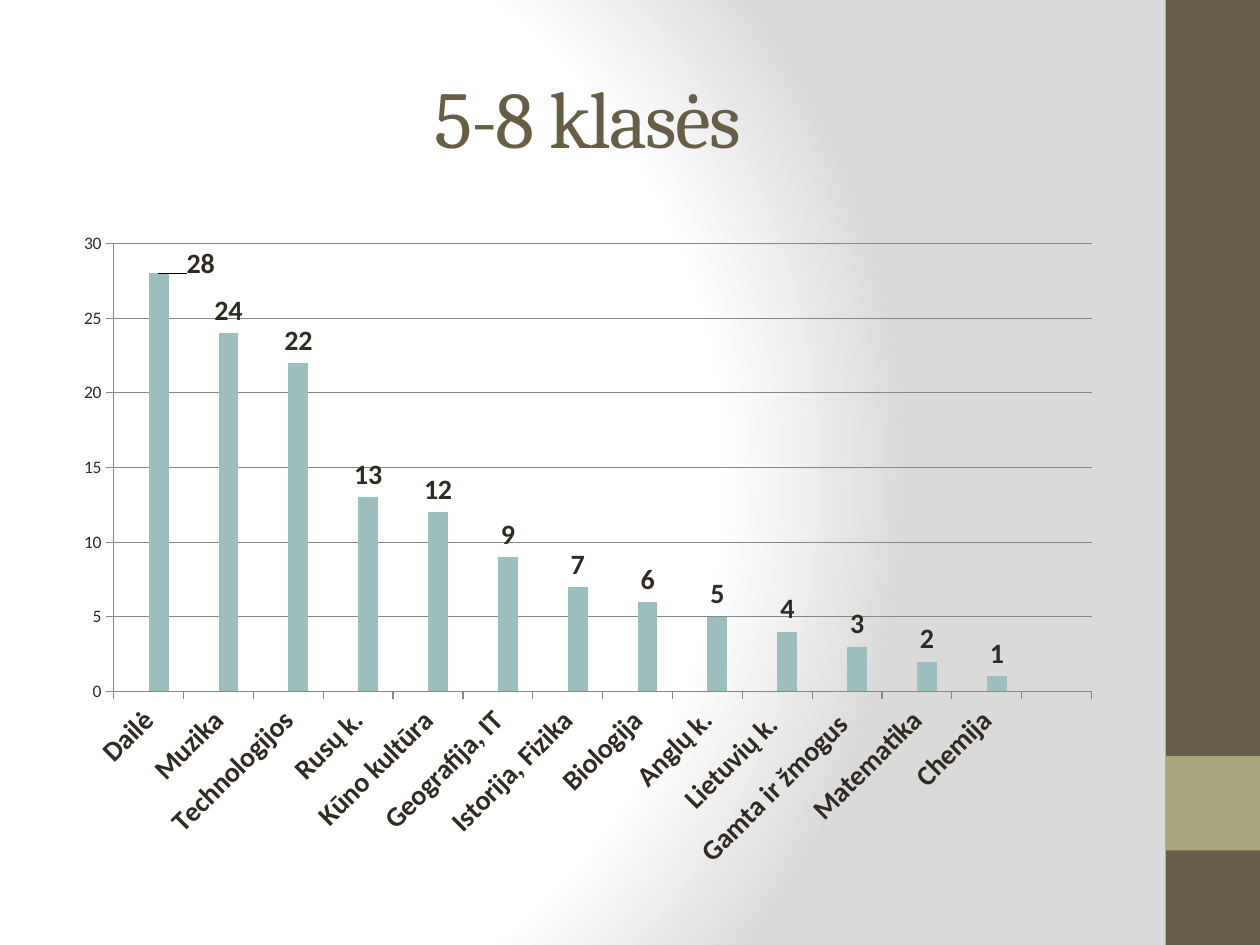
"""Build the slide with the column chart of subjects in grades 5-8."""
from pptx import Presentation
from pptx.chart.data import CategoryChartData
from pptx.dml.color import RGBColor
from pptx.enum.chart import XL_CHART_TYPE, XL_LABEL_POSITION, XL_TICK_MARK
from pptx.enum.shapes import MSO_SHAPE
from pptx.enum.text import MSO_ANCHOR, PP_ALIGN
from pptx.oxml import parse_xml
from pptx.oxml.ns import nsdecls
from pptx.util import Inches, Pt

HUE = {"bark": "675E47", "moss": "A9A57C", "teal": "9CBEBD",
       "ink": "2F2B20", "grid": "868686", "white": "FFFFFF", "mist": "DADADA"}
RANKS = {"Dailė": 28, "Muzika": 24, "Technologijos": 22, "Rusų k.": 13,
         "Kūno kultūra": 12, "Geografija, IT": 9, "Istorija, Fizika": 7,
         "Biologija": 6, "Anglų k.": 5, "Lietuvių k. ": 4,
         "Gamta ir žmogus ": 3, "Matematika": 2, "Chemija": 1, "": None}


def tint(name):
    return RGBColor.from_string(HUE[name])


def style(item, **form):
    for key, val in form.items():
        if key == "color":
            item.color.rgb = tint(val)
        else:
            setattr(item, key, val)


deck = Presentation()
deck.slide_width, deck.slide_height = Inches(10), Inches(7.5)
wide, high = deck.slide_width, deck.slide_height
slide = deck.slides.add_slide(deck.slide_layouts[5])

stops = "".join(f'<a:gs pos="{pos * 1000}"><a:srgbClr val="{HUE[name]}"/></a:gs>'
                for pos, name in ((0, "white"), (75, "white"), (100, "mist")))
slide.element.cSld.insert(0, parse_xml(
    f'<p:bg {nsdecls("p", "a")}><p:bgPr><a:gradFill rotWithShape="1">'
    f'<a:gsLst>{stops}</a:gsLst><a:path path="circle">'
    '<a:fillToRect l="20000" t="50000" r="100000" b="50000"/></a:path>'
    '</a:gradFill><a:effectLst/></p:bgPr></p:bg>'))

band = wide * 3 // 40
for top, tall, name in ((0, high, "bark"), (high * 4 // 5, band, "moss")):
    box = slide.shapes.add_shape(MSO_SHAPE.RECTANGLE, wide - band, top, band, tall)
    box.shadow.inherit = False
    box.fill.solid()
    box.fill.fore_color.rgb = tint(name)
    box.line.fill.background()

left, span = wide // 20, int(wide * 0.833)
title = slide.shapes.title
style(title, left=left, top=high // 25, width=span, height=high // 6)
style(title.text_frame, text="5-8 klasės", vertical_anchor=MSO_ANCHOR.MIDDLE)
line = title.text_frame.paragraphs[0]
line.alignment = PP_ALIGN.CENTER
run = line.runs[0]
style(run.font, name="Cambria", size=Pt(46), color="bark")
run.font._element.set("spc", "-100")

data = CategoryChartData()
data.categories = list(RANKS)
data.add_series("Series 1", [None] * len(RANKS))
data.add_series("Series 2", list(RANKS.values()))
chart = slide.shapes.add_chart(XL_CHART_TYPE.COLUMN_CLUSTERED, left, high * 7 // 30,
                               span, high * 7 // 10, data).chart
style(chart, has_legend=False, has_title=False)
style(chart.font, name="Calibri", size=Pt(10), color="ink")

plot = chart.plots[0]
style(plot, gap_width=150, overlap=0, vary_by_categories=False)
for row, name in zip(plot.series, ("moss", "teal")):
    row.format.fill.solid()
    row.format.fill.fore_color.rgb = tint(name)

bold = {"name": "Calibri", "size": Pt(16), "bold": True, "color": "ink"}
tags = row.data_labels
style(tags, show_value=True, position=XL_LABEL_POSITION.OUTSIDE_END)
first = row.points[0].data_label
first.position = XL_LABEL_POSITION.OUTSIDE_END
for font in (tags.font, first.font, chart.category_axis.tick_labels.font):
    style(font, **bold)
tags._element.find("{*}dLbl").insert(1, parse_xml(
    f'<c:layout {nsdecls("c")}><c:manualLayout><c:x val="0.04"/>'
    '<c:y val="0.02"/></c:manualLayout></c:layout>'))

base, scale = chart.category_axis, chart.value_axis
style(scale, minimum_scale=0, maximum_scale=30, major_unit=5, has_major_gridlines=True)
for axis in (base, scale):
    style(axis, major_tick_mark=XL_TICK_MARK.OUTSIDE, minor_tick_mark=XL_TICK_MARK.NONE)
for part in (base, scale, scale.major_gridlines):
    style(part.format.line, color="grid", width=Pt(0.75))
base._element.find("{*}txPr/{*}bodyPr").set("rot", "-2700000")

deck.save("out.pptx")
